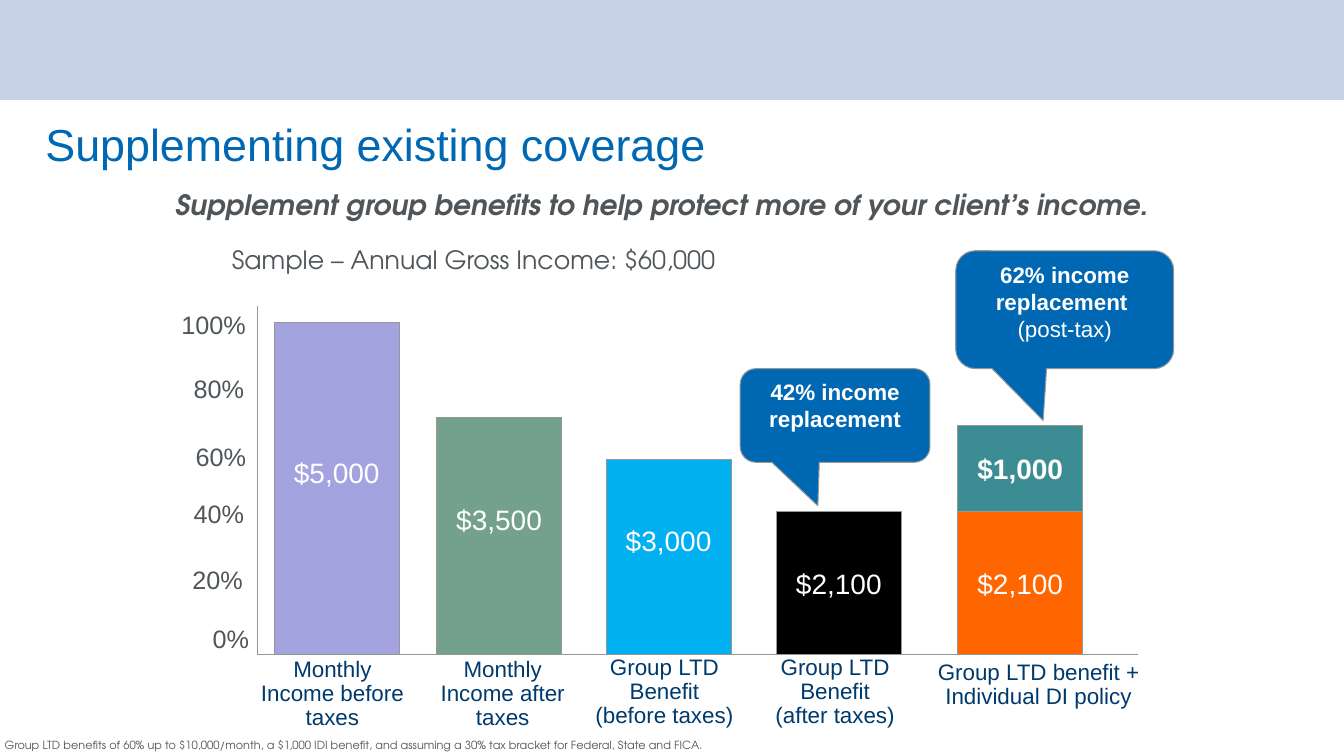
from pptx import Presentation
from pptx.dml.color import RGBColor
from pptx.enum.shapes import MSO_CONNECTOR, MSO_SHAPE
from pptx.enum.text import MSO_ANCHOR, PP_ALIGN
from pptx.oxml.ns import qn
from pptx.util import Cm, Pt

RECT = MSO_SHAPE.RECTANGLE
CALLOUT = MSO_SHAPE.ROUNDED_RECTANGULAR_CALLOUT
STRAIGHT = MSO_CONNECTOR.STRAIGHT
TOP, MIDDLE = MSO_ANCHOR.TOP, MSO_ANCHOR.MIDDLE
LEFT, CENTER = PP_ALIGN.LEFT, PP_ALIGN.CENTER

SANS, GEOMETRIC = "Arial", "TeX Gyre Adventor"
BLUE, NAVY, GRAY, RULE, WHITE = "0068B3", "003A6D", "4F5559", "969696", "FFFFFF"
SLIDE_WIDTH, SLIDE_HEIGHT = 33.86, 19.05
BAR_WIDTH = 3.15

# Share, left from the axis, top from the chart top
TICKS = [
    ("100%", -2.16, -0.05), ("80%", -1.85, 1.57), ("60%", -1.8, 3.28),
    ("40%", -1.85, 4.7), ("20%", -1.88, 6.38), ("0%", -1.37, 7.85),
]
# Left from the axis, segments upward: (amount, height, fill, bold, lift of the amount)
BARS = [
    (0.43, [("$5,000", 8.38, "A3A3E0", False, 0.81)]),
    (4.52, [("$3,500", 5.99, "74A18E", False, 0.81)]),
    (8.79, [("$3,000", 4.93, "00B0F0", False, 0.81)]),
    (13.08, [("$2,100", 3.6, "000000", False, 0)]),
    (17.65, [("$2,100", 3.6, "FF6600", False, 0),
             ("$1,000", 2.17, "3C8C93", True, 0)]),
]
# Text, left from the axis, offset from the baseline, width
CATEGORIES = [
    ("Monthly Income before taxes", -0.25, -0.05, 4.29),
    ("Monthly Income after taxes", 4.04, -0.05, 4.29),
    ("Group LTD\vBenefit\v(before taxes)", 7.87, -0.1, 4.78),
    ("Group LTD\vBenefit\v(after taxes)", 12.17, -0.1, 4.78),
    ("Group LTD benefit + Individual DI policy", 16.46, 0.03, 6.45),
]
# Bold text, plain text, box from the chart corner, adjustments
CALLOUTS = [
    ("42% income replacement", "", (12.17, 1.57, 4.78, 2.36), (-0.091, 0.964, 0.167)),
    ("62% income replacement ", "\v(post-tax)", (17.6, -1.4, 5.49, 2.97),
     (-0.099, 0.94, 0.167)),
]


def color(value):
    return RGBColor.from_string(value)


def set_font(font, name, size, tint, bold=False, italic=False):
    font.name, font.size = name, Pt(size)
    font.bold, font.italic = bold, italic
    font.color.rgb = color(tint)


def add_text(page, box, text, size, tint, name=SANS, align=LEFT, spacing=1.0,
             bold=False, italic=False):
    frame = page.shapes.add_textbox(*map(Cm, box)).text_frame
    frame.word_wrap = True
    frame.text = text
    para = frame.paragraphs[0]
    para.alignment, para.line_spacing = align, spacing
    set_font(para.font, name, size, tint, bold, italic)


def add_box(page, kind, box, fill, line=None):
    shape = page.shapes.add_shape(kind, *map(Cm, box))
    shape.shadow.inherit = False
    shape.fill.solid()
    shape.fill.fore_color.rgb = color(fill)
    if line:
        shape.line.color.rgb = color(line)
        shape.line.width = Pt(0.75)
    else:
        shape.line.fill.background()
    return shape


def add_rule(page, start, end, width):
    rule = page.shapes.add_connector(STRAIGHT, *map(Cm, start + end))
    rule.line.color.rgb = color(RULE)
    rule.line.width = Pt(width)
    properties = rule._element.spPr
    properties.append(properties.makeelement(qn("a:effectLst"), {}))


def add_heading(page, box):
    left, top, width, height = box
    title = page.shapes.title
    title.left, title.top, title.width, title.height = map(
        Cm, (left, top, 22.86, 1.5))
    frame = title.text_frame
    frame.text = "Supplementing existing coverage"
    frame.vertical_anchor = MIDDLE
    para = frame.paragraphs[0]
    para.alignment, para.line_spacing = LEFT, 0.9
    set_font(para.font, SANS, 32, BLUE)
    add_text(page, (left + 3.28, top + 1.65, width - 4, 1.12),
             "Supplement group benefits to help protect more of your client’s income.",
             20, GRAY, GEOMETRIC, bold=True, italic=True)
    add_text(page, (left + 4.7, top + 3.07, 13.34, 1.02),
             "Sample – Annual Gross Income: $60,000", 18, GRAY, GEOMETRIC)


def add_bar(page, left, baseline, segments):
    bottom = baseline
    for amount, height, fill, bold, lift in segments:
        bottom -= height
        bar = add_box(page, RECT, (left, bottom, BAR_WIDTH, height), fill, RULE)
        frame = bar.text_frame
        frame.vertical_anchor = MIDDLE
        frame.margin_bottom = Cm(0.13 + lift)
        frame.text = amount
        para = frame.paragraphs[0]
        para.alignment = CENTER
        set_font(para.font, SANS, 20, WHITE, bold)


def add_callout(page, box, strong, plain, adjustments):
    bubble = add_box(page, CALLOUT, box, BLUE, RULE)
    for index, value in enumerate(adjustments):
        bubble.adjustments[index] = value
    frame = bubble.text_frame
    frame.word_wrap = True
    frame.vertical_anchor = TOP
    frame.text = strong + plain[:1]
    para = frame.paragraphs[0]
    para.alignment = CENTER
    set_font(para.font, SANS, 16, WHITE)
    para.runs[0].font.bold = True
    if plain:
        para.add_run().text = plain[1:]


def add_income_chart(page, box):
    left, top, width, height = box
    baseline = top + height

    # Axes and shares
    add_rule(page, (left, top), (left, baseline), 1)
    add_rule(page, (left, baseline), (left + width, baseline), 0.5)
    for share, x, y in TICKS:
        add_text(page, (left + x, top + y, 2.4, 1.14), share, 18, GRAY)

    # Bars and categories
    for x, segments in BARS:
        add_bar(page, left + x, baseline, segments)
    for text, x, y, label_width in CATEGORIES:
        add_text(page, (left + x, baseline + y, label_width, 2.3), text, 16, NAVY,
                 align=CENTER, spacing=0.9)

    # Income replacement bubbles
    for strong, plain, (x, y, w, h), adjustments in CALLOUTS:
        add_callout(page, (left + x, top + y, w, h), strong, plain, adjustments)


def add_footnote(page, box):
    add_text(page, box,
             "Group LTD benefits of 60% up to $10,000/month, a $1,000 IDI benefit, "
             "and assuming a 30% tax bracket for Federal, State and FICA.",
             8, GRAY, GEOMETRIC)


def main():
    deck = Presentation()
    deck.slide_width, deck.slide_height = Cm(SLIDE_WIDTH), Cm(SLIDE_HEIGHT)
    page = deck.slides.add_slide(deck.slide_layouts[5])
    add_box(page, RECT, (0, 0, SLIDE_WIDTH, 2.52), "C8D2E6")
    add_heading(page, (0.89, 2.95, 30.3, 4.1))
    add_income_chart(page, (6.48, 7.72, 22.2, 8.78))
    add_footnote(page, (-0.13, 18.47, 19.74, 0.58))
    deck.save("out.pptx")


if __name__ == "__main__":
    main()
